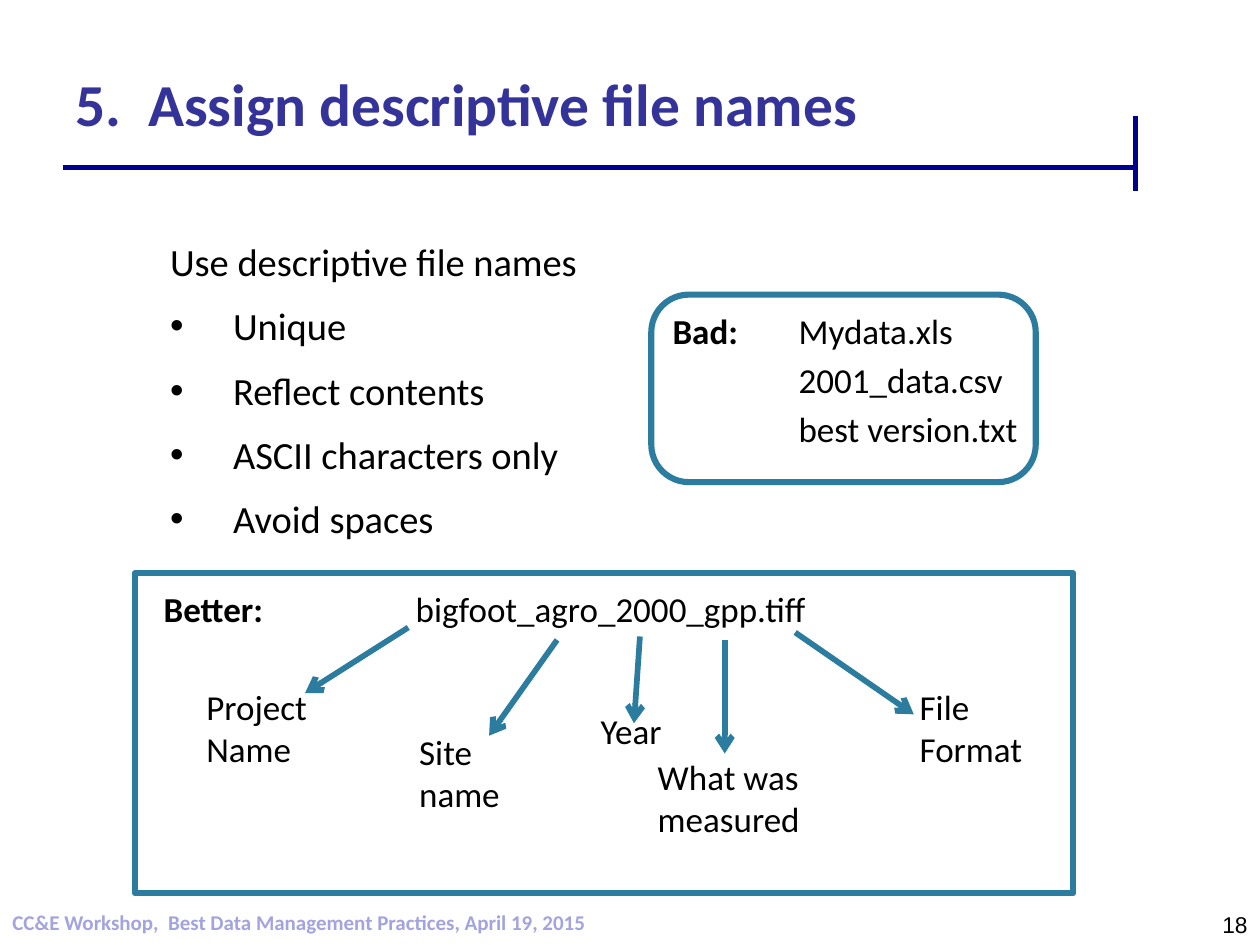
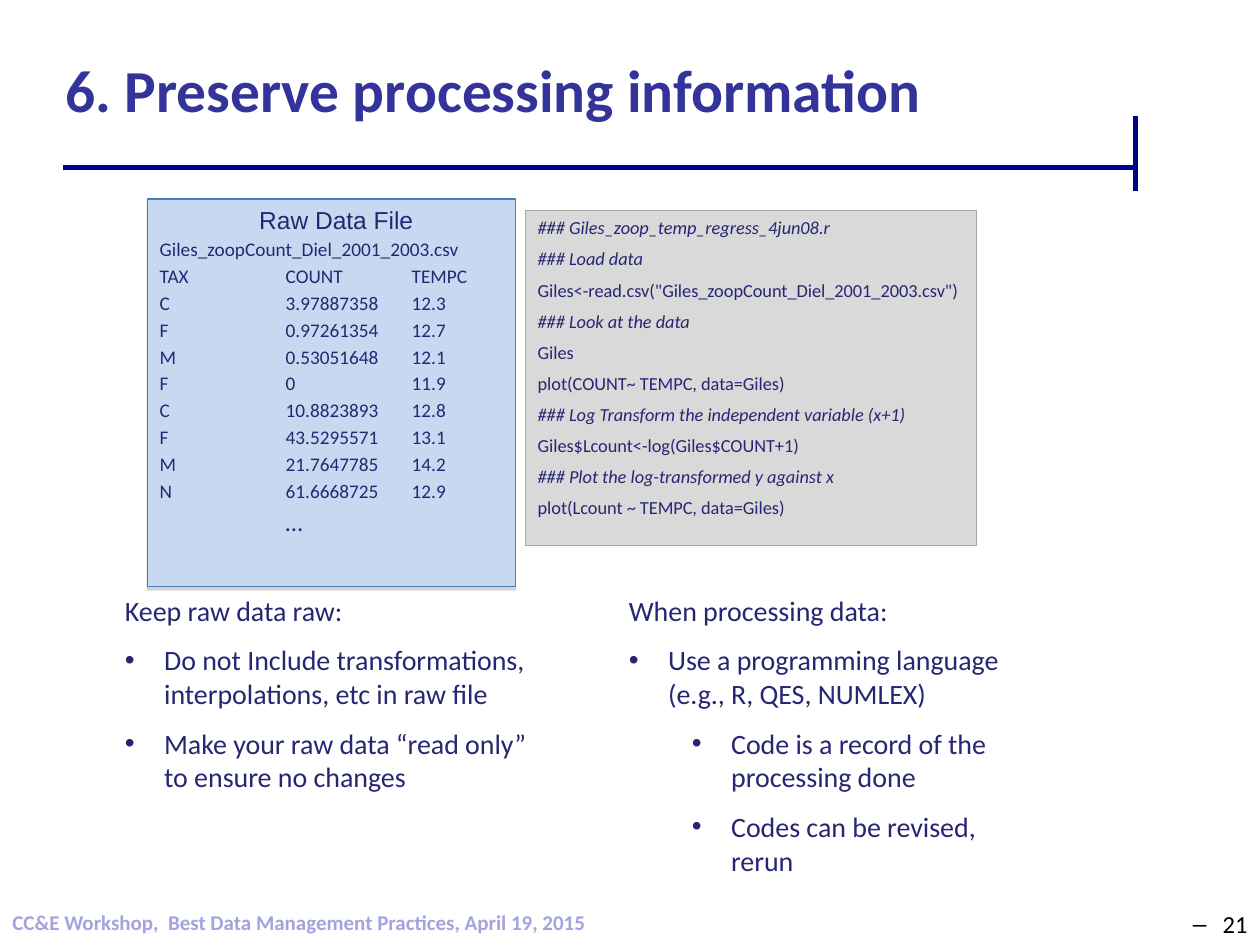
from lxml import etree
from pptx import Presentation
from pptx import util as u
from pptx.dml.color import RGBColor
from pptx.enum import shapes, text
from pptx.oxml import ns

NAVY, TITLE, INK = "000090", "333399", "262673"
TEAL, BLACK, PALE = "2C7C9F", "000000", "A3A3E0"
FOOT = "CC&E Workshop,  Best Data Management Practices, April 19, 2015"
CODE = [
    "### Giles_zoop_temp_regress_4jun08.r",
    "### Load data",
    'Giles<-read.csv("Giles_zoopCount_Diel_2001_2003.csv")',
    "### Look at the data",
    "Giles",
    "plot(COUNT~ TEMPC, data=Giles)",
    "### Log Transform the independent variable (x+1)",
    "Giles$Lcount<-log(Giles$COUNT+1)",
    "### Plot the log-transformed y against x",
    "plot(Lcount ~ TEMPC, data=Giles)",
]
ROWS = [
    ("TAX", "COUNT", "TEMPC"),
    ("C", "3.97887358", "12.3"),
    ("F", "0.97261354", "12.7"),
    ("M", "0.53051648", "12.1"),
    ("F", "0", "11.9"),
    ("C", "10.8823893", "12.8"),
    ("F", "43.5295571", "13.1"),
    ("M", "21.7647785", "14.2"),
    ("N", "61.6668725", "12.9"),
]
LABELS = [
    ("Project Name", 3.91, 13.69, 3.51),
    ("Site name", 8.2, 14.61, 2.67),
    ("Year", 11.86, 14.17, 2.11),
    ("What was measured", 13.01, 15.11, 4.7),
    ("File Format", 18.29, 13.69, 2.67),
]
ARROWS = [
    (8.23, 12.65, 6.15, 13.97),
    (11.23, 12.9, 9.86, 14.83),
    (12.9, 12.83, 12.78, 14.58),
    (14.61, 12.9, 14.61, 15.19),
    (16.03, 12.75, 18.42, 14.4),
]


def color(code):
    """Turn a hex string into a colour."""
    return RGBColor.from_string(code)


def place(box):
    """Turn centimetres into lengths."""
    return [u.Cm(v) for v in box]


def add(parent, tag, **attrs):
    """Append a drawing element to its parent."""
    return etree.SubElement(parent, ns.qn("a:" + tag), {k: str(v) for k, v in attrs.items()})


def style(par, size, tone, font="Calibri", bold=None, slant=None):
    """Format all runs of a paragraph."""
    for run in par.runs:
        run.font.size = u.Pt(size)
        run.font.name = font
        run.font.bold = bold
        run.font.italic = slant
        run.font.color.rgb = color(tone)


def fill_text(frame, lines, size, tone, gap=0.2, after=0, **looks):
    """Write evenly spaced lines into a text frame."""
    frame.word_wrap = True
    frame.text = "\n".join(lines)
    for i, par in enumerate(frame.paragraphs):
        par.alignment = text.PP_ALIGN.LEFT
        if i:
            par.space_before = u.Pt(round(size * gap, 1))
        par.space_after = u.Pt(after)
        style(par, size, tone, **looks)


def write(slide, box, lines, size, tone, **looks):
    """Add a text box and return its frame."""
    frame = slide.shapes.add_textbox(*place(box)).text_frame
    fill_text(frame, lines, size, tone, **looks)
    return frame


def stops(frame, *spots):
    """Set left tab stops on every paragraph of a frame."""
    for par in frame.paragraphs:
        tabs = add(par._p.get_or_add_pPr(), "tabLst")
        for spot in spots:
            add(tabs, "tab", pos=u.Cm(spot), algn="l")


def bullet(par, left, hang, mark="•"):
    """Give a paragraph a hanging bullet."""
    props = par._p.get_or_add_pPr()
    props.set("marL", str(u.Cm(left)))
    props.set("indent", str(-u.Cm(hang)))
    add(props, "buFont", typeface="Arial")
    add(props, "buChar", char=mark)


def points(slide, box, lines, size, tone, hang, deep=()):
    """Add a lead line with bullets, the deep ones one level in."""
    frame = write(slide, box, lines, size, tone, after=6)
    for i, par in enumerate(frame.paragraphs[1:], 1):
        par.level = int(i in deep)
        bullet(par, hang + 1.27 * par.level, hang)
    return frame


def lead(par, word):
    """Set the first word of a paragraph in bold."""
    run = par.runs[0]
    size, tone = run.font.size.pt, str(run.font.color.rgb)
    rest = run.text[len(word):]
    run.text = word
    par.add_run().text = rest
    style(par, size, tone)
    run.font.bold = True


def line(slide, ends, tone, width, arrow=False):
    """Draw a straight line, with an arrowhead if asked."""
    link = slide.shapes.add_connector(shapes.MSO_CONNECTOR.STRAIGHT, *place(ends))
    link.line.color.rgb = color(tone)
    link.line.width = u.Pt(width)
    if arrow:
        add(link.line._get_or_add_ln(), "tailEnd", type="arrow")
    add(link._element.spPr, "effectLst")


def panel(slide, box, edge, width, fill=None, bend=None):
    """Draw a plain or rounded box."""
    kind = shapes.MSO_SHAPE.RECTANGLE if bend is None else shapes.MSO_SHAPE.ROUNDED_RECTANGLE
    shape = slide.shapes.add_shape(kind, *place(box))
    shape.shadow.inherit = False
    if bend is not None:
        shape.adjustments[0] = bend
    if fill:
        shape.fill.solid()
        shape.fill.fore_color.rgb = color(fill)
    else:
        shape.fill.background()
    shape.line.color.rgb = color(edge)
    shape.line.width = u.Pt(width)
    return shape


def shade(shape):
    """Drop a faint grey shadow below a shape."""
    effects = shape._element.spPr.find(ns.qn("a:effectLst"))
    outer = add(effects, "outerShdw", blurRad=0, dist=u.Pt(1.8), dir=5400000, rotWithShape=0)
    add(add(outer, "srgbClr", val="808080"), "alpha", val=35000)


def start(deck, title, box, page, size, font):
    """Add a slide with rules, title, footer and page number."""
    slide = deck.slides.add_slide(deck.slide_layouts[6])
    line(slide, (22.89, 2.34, 22.89, 3.86), NAVY, 2.75)
    line(slide, (1.27, 3.38, 22.86, 3.38), NAVY, 2.75)
    write(slide, (0, 18.21, 12.5, 0.84), [FOOT], 12, PALE, bold=True)
    head = write(slide, box, [title], 34, TITLE, bold=True)
    num = write(slide, (19.48, 18.21, 5.92, 0.84), [page], size, BLACK, font=font)
    for frame in (head, num):
        frame.vertical_anchor = text.MSO_ANCHOR.MIDDLE
    num.paragraphs[0].alignment = text.PP_ALIGN.RIGHT
    return slide, num.paragraphs[0]


def naming(deck):
    """Build the slide on file names."""
    slide, _ = start(deck, "5.  Assign descriptive file names",
                     (1.27, 0.76, 21.59, 2.62), "18", 13, "Arial")
    points(slide, (3.18, 4.67, 11.86, 6.55),
           ["Use descriptive file names", "Unique", "Reflect contents",
            "ASCII characters only", "Avoid spaces"], 22, BLACK, 1.27)
    panel(slide, (13.13, 5.94, 7.75, 3.78), TEAL, 3.5, bend=0.2)
    bad = write(slide, (13.31, 6.12, 8.2, 3.18),
                ["Bad:\tMydata.xls", "\t2001_data.csv", "\tbest version.txt"], 20, BLACK)
    lead(bad.paragraphs[0], "Bad:")
    stops(bad, 2.54)
    panel(slide, (2.72, 11.56, 18.92, 6.45), TEAL, 3.5, bend=0)
    good = write(slide, (3.05, 11.71, 13.84, 1.1),
                 ["Better:\tbigfoot_agro_2000_gpp.tiff"], 20, BLACK)
    lead(good.paragraphs[0], "Better:")
    stops(good, 5.08)
    for label, left, top, width in LABELS:
        write(slide, (left, top, width, 1.96), [label], 20, BLACK)
    for ends in ARROWS:
        line(slide, ends, TEAL, 3.25, arrow=True)


def process(deck):
    """Build the slide on processing information."""
    slide, num = start(deck, "6. Preserve processing information",
                       (1.07, 0.2, 23.06, 3.18), "21", 14, "Calibri")
    bullet(num, 0.6, 0.6, "–")
    shade(panel(slide, (2.97, 4.01, 7.42, 7.82), "4A7EBB", 0.75, "C6D9F1"))
    head = write(slide, (2.97, 4.01, 7.62, 0.86), ["Raw Data File"], 14, INK, font="Arial")
    head.paragraphs[0].alignment = text.PP_ALIGN.CENTER
    rows = ["Giles_zoopCount_Diel_2001_2003.csv", *("\t".join(row) for row in ROWS), "\t…"]
    raw = write(slide, (2.97, 4.65, 9.73, 6.99), rows, 11, INK)
    style(raw.paragraphs[-1], 14, INK)
    stops(raw, 2.54, 5.08)

    code = panel(slide, (10.59, 4.24, 9.09, 6.76), "A6A6A6", 0.75, "D9D9D9").text_frame
    code.vertical_anchor = text.MSO_ANCHOR.TOP
    fill_text(code, CODE, 10.5, INK, gap=0.5)
    for par in code.paragraphs:
        style(par, 10.5, INK, slant=par.text.startswith("#"))

    keep = points(slide, (2.34, 11.86, 8.46, 6.3),
                  ["Keep raw data raw:",
                   "Do not Include transformations, interpolations, etc in raw file",
                   "Make your raw data “read only” to ensure no changes"], 16, INK, 0.79)
    work = points(slide, (12.5, 11.86, 8.26, 6.3),
                  ["When processing data:",
                   "Use a programming language (e.g., R, QES, NUMLEX)",
                   "Code is a record of the processing done",
                   "Codes can be revised, rerun"], 16, INK, 0.79, deep=(2, 3))
    for frame in (keep, work):
        frame.margin_left = frame.margin_right = u.Cm(0.18)
        frame.margin_top = frame.margin_bottom = u.Cm(0.1)


def main():
    """Build and save the deck."""
    deck = Presentation()
    deck.slide_width, deck.slide_height = place((25.4, 19.05))
    naming(deck)
    process(deck)
    deck.save("out.pptx")


if __name__ == "__main__":
    main()
